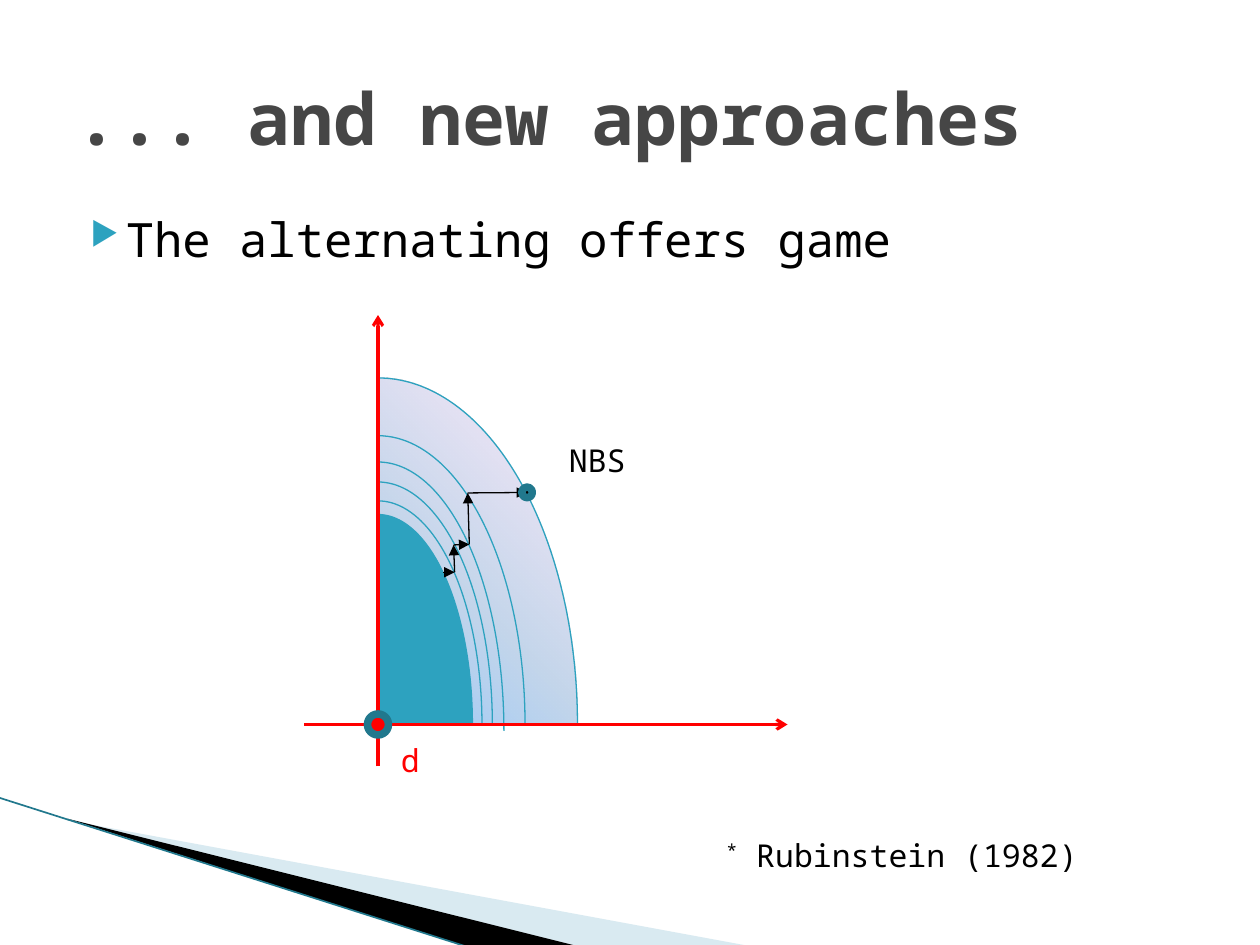
from itertools import pairwise
from lxml import etree
from pptx import Presentation
from pptx import util as u
from pptx.dml.color import RGBColor
from pptx.enum import shapes as es, text as et
from pptx.oxml.ns import qn

COLS, ROWS = 120, 90          # grid of the slide
CELL = u.Inches(10) // COLS   # one column = one row
FONT = "Noto Sans Mono"
TEAL, DARK, RED, BLACK = "2DA2BF", "21788D", "FF0000", "000000"


def cells(*nums):
    return [round(n * CELL) for n in nums]


def rgb(code):
    return RGBColor.from_string(code)


def sub(node, tag, **attrs):
    return etree.SubElement(node, qn(tag), attrs)


def paint(shape, fill=None, line=None, width=0.75):
    shape.shadow.inherit = False
    if fill:
        shape.fill.solid()
        shape.fill.fore_color.rgb = rgb(fill)
    else:
        shape.fill.background()
    if line:
        shape.line.color.rgb = rgb(line)
        shape.line.width = u.Pt(width)
    else:
        shape.line.fill.background()


def blend(shape, stops, angle):
    """Gradient fill from (place, colour, opacity) stops."""
    grad = etree.Element(qn("a:gradFill"), rotWithShape="1")
    items = sub(grad, "a:gsLst")
    for place, code, alpha in stops:
        stop = sub(items, "a:gs", pos=str(place * 1000))
        tone = sub(stop, "a:srgbClr", val=code)
        if alpha < 100:
            sub(tone, "a:alpha", val=str(alpha * 1000))
    sub(grad, "a:lin", ang=str(angle * 60000), scaled="0")
    old = shape._element.spPr.find(qn("a:noFill"))
    old.getparent().replace(old, grad)


def oval(slide, kind, x, y, rx, ry, **look):
    """Arc or ellipse round a centre."""
    shape = slide.shapes.add_shape(kind, *cells(x - rx, y - ry, 2 * rx, 2 * ry))
    paint(shape, **look)
    return shape


def stroke(slide, start, end, color, width, head=None):
    line = slide.shapes.add_connector(
        es.MSO_CONNECTOR.STRAIGHT, *cells(*start, *end))
    line.line.color.rgb = rgb(color)
    line.line.width = u.Pt(width)
    if head:
        sub(line.line._get_or_add_ln(), "a:tailEnd", type=head)
    sub(line._element.spPr, "a:effectLst")


def label(slide, box, runs, size, color=BLACK, bold=False, bullet=None,
          anchor=et.MSO_ANCHOR.TOP):
    """Text box; runs are (words, baseline) pairs."""
    frame = slide.shapes.add_textbox(*cells(*box)).text_frame
    frame.word_wrap = True
    frame.vertical_anchor = anchor
    para = frame.paragraphs[0]
    if bullet:
        props = para._p.get_or_add_pPr()
        props.set("marL", str(u.Inches(0.4)))
        props.set("indent", str(u.Inches(-0.28)))
        sub(sub(props, "a:buClr"), "a:srgbClr", val=TEAL)
        sub(props, "a:buSzPct", val="68000")
        sub(props, "a:buChar", char=bullet)
    for words, base in runs:
        run = para.add_run()
        run.text = words
        font = run.font
        font.name, font.size, font.bold = FONT, u.Pt(size), bold
        font.color.rgb = rgb(color)
        if base:
            font._element.set("baseline", str(base * 1000))


def swoosh(slide, left, top, wide, high):
    """Corner decoration: two wedges and an edge line."""
    wedges = [
        ("A0CBDC", 40, [(0.09, 0.15), (1, 1), (0.77, 1)]),
        (BLACK, 100, [(0.09, 0.14), (0.77, 1), (0.62, 1)]),
    ]
    for color, alpha, shares in wedges:
        points = [cells(left + x * wide, top + y * high) for x, y in shares]
        pen = slide.shapes.build_freeform(*points[0])
        pen.add_line_segments(points[1:], close=True)
        wedge = pen.convert_to_shape()
        paint(wedge, color)
        if alpha < 100:
            tone = wedge._element.spPr.find(".//" + qn("a:srgbClr"))
            sub(tone, "a:alpha", val=str(alpha * 1000))
    stroke(slide, (left, top), (left + 0.62 * wide, top + high), DARK, 0.95)


def graph(slide, left, top, wide, high):
    """Bargaining set with shrinking frontiers and the path of offers."""
    zx, zy = left + 7, top + 39
    arc, dot = es.MSO_SHAPE.ARC, es.MSO_SHAPE.OVAL

    # Outer frontier, blended
    outer = oval(slide, arc, zx, zy, 19, 33, line=TEAL)
    blend(outer, [(0, "5E9EFF", 0), (40, "85C2FF", 100),
                  (70, "C4D6EB", 100), (100, "FFEBFA", 100)], 315)

    # Inner frontiers: drop of the centre, radii, fill
    for drop, rx, ry, fill in [(0, 14, 27.5, None), (0.6, 12, 25.6, None),
                               (0, 10.9, 23.1, None), (0, 9.9, 21.3, None),
                               (0, 9, 20, TEAL)]:
        oval(slide, arc, zx, zy + drop, rx, ry, fill=fill, line=TEAL)

    # Axes and disagreement point
    stroke(slide, (zx, top + high), (zx, top), RED, 1.75, "arrow")
    stroke(slide, (left, zy), (left + wide, zy), RED, 1.75, "arrow")
    oval(slide, dot, zx, zy, 1, 1, fill=RED, line=DARK, width=4.33)
    label(slide, (left + 8, top + 40, 10, 4.8), [("d", 0)], 18, RED)

    # Offers, as steps right and up from the origin
    steps = [(6.24, 14.5), (7.3, 14.5), (7.2, 17.1), (8.7, 17.15),
             (8.55, 22.05), (14.2, 22.1)]
    spots = [(zx + x, zy - y) for x, y in steps]
    for start, end in pairwise(spots):
        stroke(slide, start, end, BLACK, 0.75, "triangle")
    oval(slide, dot, *spots[-1], 0.5, 0.5, fill=BLACK, line=DARK, width=4.33)
    label(slide, (left + 24, top + 11.4, 18.5, 4.8), [("NBS", 0)], 18)


def main():
    deck = Presentation()
    deck.slide_width, deck.slide_height = cells(COLS, ROWS)
    slide = deck.slides.add_slide(deck.slide_layouts[6])

    swoosh(slide, 0, 76, 71.4, 14.1)
    # Heading and point
    label(slide, (6, 3.6, 108, 15), [("... and new approaches", 0)], 41,
          "464646", bold=True, anchor=et.MSO_ANCHOR.MIDDLE)
    label(slide, (6, 19.4, 108, 10), [("The alternating offers game", 0)], 27,
          bullet="▶")
    graph(slide, 29, 30, 46, 43)
    # Reference
    label(slide, (68, 79, 40, 4.8), [("*", 30), (" Rubinstein (1982)", 0)], 18)
    deck.save("out.pptx")


if __name__ == "__main__":
    main()
